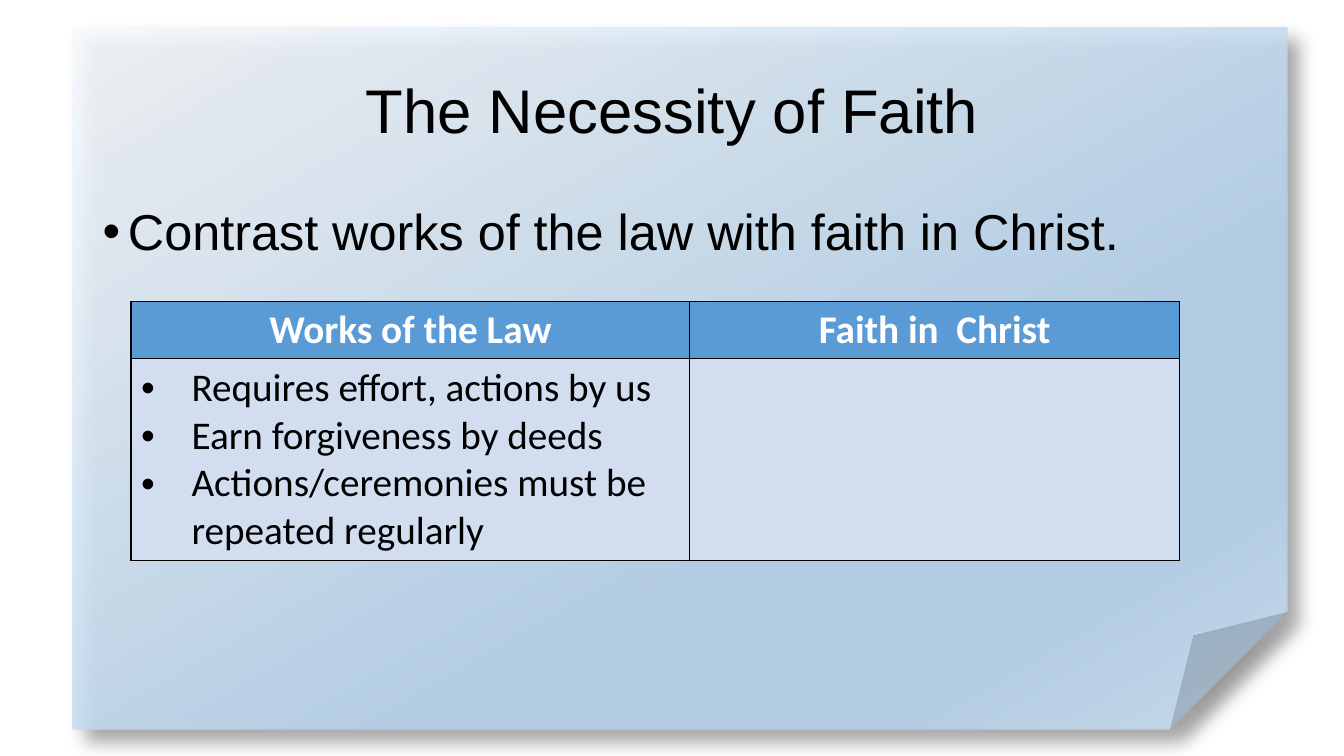
"""Build a slide contrasting works of the law with faith in Christ."""
from pptx import Presentation
from pptx.dml.color import RGBColor
from pptx.enum.shapes import MSO_SHAPE
from pptx.enum.text import MSO_ANCHOR, PP_ALIGN
from pptx.oxml import parse_xml
from pptx.oxml.ns import nsdecls
from pptx.util import Inches, Pt

FOLDED = MSO_SHAPE.FOLDED_CORNER
CENTER, LEFT = PP_ALIGN.CENTER, PP_ALIGN.LEFT
MIDDLE, TOP = MSO_ANCHOR.MIDDLE, MSO_ANCHOR.TOP

TITLE = "The Necessity of Faith"
PROMPT = "Contrast works of the law with faith in Christ."
HEADERS = ["Works of the Law", "Faith in  Christ"]
POINTS = [
    ["Requires effort, actions by us", "Earn forgiveness by deeds",
     "Actions/ceremonies must be repeated regularly"],
    [],
]
PAPER_BOX = (0.72, 0.27, 12.05, 6.97)
TITLE_BOX = (0.92, 0.4, 11.5, 1.45)
PROMPT_BOX = (0.92, 2, 11.5, 4.76)
TABLE_AT = (1.3, 2.99)
COL_WIDTHS = [5.54, 4.86]
ROW_HEIGHTS = [0.57, 2]

THEME = {
    "text": "000000", "header_text": "FFFFFF", "header": "5B9BD5",
    "body": "D2DEEF", "border": "000000", "border_pt": 1,
    "paper": [(0, "F7FAFD"), (64, "B5D2EC"), (83, "B5D2EC"), (100, "CEE1F2")],
    "paper_alpha": 87, "shadow": "000000", "shadow_alpha": 40, "shadow_pt": 13,
    "heading_font": "Arial", "table_font": "Calibri",
    "title_pt": 44, "prompt_pt": 36, "table_pt": 28,
}


def color_xml(color, alpha):
    return f'<a:srgbClr val="{color}"><a:alpha val="{alpha * 1000}"/></a:srgbClr>'


def write(tf, lines, size, font, color=THEME["text"], bold=False,
          align=LEFT, anchor=TOP, spacing=1, indent=0):
    tf.word_wrap = True
    tf.vertical_anchor = anchor
    for i, line in enumerate(lines):
        p = tf.add_paragraph() if i else tf.paragraphs[0]
        p.alignment, p.line_spacing = align, spacing
        if indent:
            pPr = p._p.get_or_add_pPr()
            pPr.set("marL", str(Inches(indent)))
            pPr.set("indent", str(-Inches(indent)))
            pPr.append(parse_xml(f'<a:buFont {nsdecls("a")} typeface="Arial"/>'))
            pPr.append(parse_xml(f'<a:buChar {nsdecls("a")} char="•"/>'))
        r = p.add_run()
        r.text = line
        r.font.size, r.font.name, r.font.bold = Pt(size), font, bold
        r.font.color.rgb = RGBColor.from_string(color)


def add_paper(slide):
    s = slide.shapes.add_shape(FOLDED, *map(Inches, PAPER_BOX))
    s.line.fill.background()
    s.shadow.inherit = False
    spPr = s._element.spPr
    stops = "".join(f'<a:gs pos="{pos * 1000}">{color_xml(c, THEME["paper_alpha"])}</a:gs>'
                    for pos, c in THEME["paper"])
    spPr.insert(2, parse_xml(
        f'<a:gradFill {nsdecls("a")} rotWithShape="1"><a:gsLst>{stops}</a:gsLst>'
        f'<a:lin ang="{60 * 60000}" scaled="0"/></a:gradFill>'))
    reach = Pt(THEME["shadow_pt"])
    spPr[-1].append(parse_xml(
        f'<a:outerShdw {nsdecls("a")} blurRad="{reach}" dist="{reach}" '
        f'dir="{45 * 60000}" algn="tl" rotWithShape="0">'
        f'{color_xml(THEME["shadow"], THEME["shadow_alpha"])}</a:outerShdw>'))


def add_text(slide, box, text, **fmt):
    tf = slide.shapes.add_textbox(*map(Inches, box)).text_frame
    write(tf, [text], font=THEME["heading_font"], spacing=0.9, **fmt)


def style_cell(cell, fill):
    cell.fill.solid()
    cell.fill.fore_color.rgb = RGBColor.from_string(fill)
    tcPr = cell._tc.get_or_add_tcPr()
    for i, side in enumerate("LRTB"):
        tcPr.insert(i, parse_xml(
            f'<a:ln{side} {nsdecls("a")} w="{Pt(THEME["border_pt"])}"><a:solidFill>'
            f'<a:srgbClr val="{THEME["border"]}"/></a:solidFill></a:ln{side}>'))


def add_contrast_table(slide):
    box = (*TABLE_AT, sum(COL_WIDTHS), sum(ROW_HEIGHTS))
    table = slide.shapes.add_table(len(ROW_HEIGHTS), len(COL_WIDTHS),
                                   *map(Inches, box)).table
    for row, height in zip(table.rows, ROW_HEIGHTS):
        row.height = Inches(height)
    fmt = {"size": THEME["table_pt"], "font": THEME["table_font"]}
    for i, (header, points) in enumerate(zip(HEADERS, POINTS)):
        table.columns[i].width = Inches(COL_WIDTHS[i])
        head, body = table.cell(0, i), table.cell(1, i)
        style_cell(head, THEME["header"])
        style_cell(body, THEME["body"])
        write(head.text_frame, [header], color=THEME["header_text"],
              bold=True, align=CENTER, **fmt)
        write(body.text_frame, points, indent=0.5, **fmt)


def main():
    prs = Presentation()
    prs.slide_width, prs.slide_height = Inches(13.33), Inches(7.5)
    slide = prs.slides.add_slide(prs.slide_layouts[6])
    add_paper(slide)
    add_text(slide, TITLE_BOX, TITLE, size=THEME["title_pt"],
             align=CENTER, anchor=MIDDLE)
    add_text(slide, PROMPT_BOX, PROMPT, size=THEME["prompt_pt"], indent=0.25)
    add_contrast_table(slide)
    prs.save("out.pptx")


if __name__ == "__main__":
    main()
